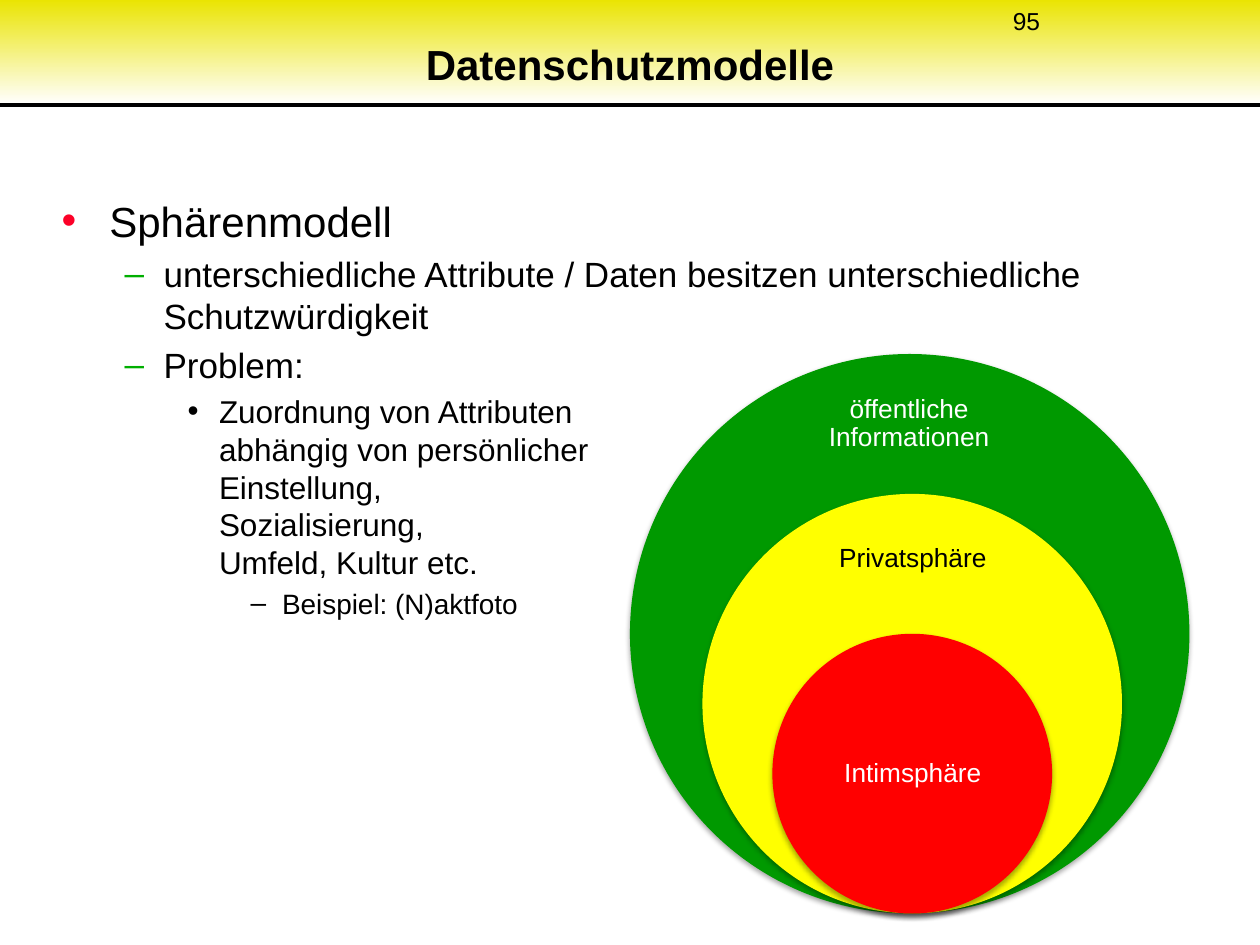
from lxml.etree import SubElement
from pptx import Presentation
from pptx.dml.color import RGBColor
from pptx.enum.shapes import MSO_CONNECTOR, MSO_SHAPE
from pptx.enum.text import MSO_ANCHOR, PP_ALIGN
from pptx.oxml.ns import qn
from pptx.util import Inches, Pt

FONT = "Arial"
COLORS = {
    "black": "000000", "white": "FFFFFF", "header": "EAE402",
    "bullet": "FC0128", "dash": "00AE00",
    "green": "009900", "yellow": "FFFF00", "red": "FF0000",
}
LEVELS = [
    {"left": 0.38, "hang": 0.38, "char": "•", "color": "bullet", "size": 24},
    {"left": 0.81, "hang": 0.31, "char": "–", "color": "dash", "size": 20},
    {"left": 1.25, "hang": 0.25, "char": "•", "color": "black", "size": 18},
    {"left": 1.75, "hang": 0.25, "char": "–", "color": "black", "size": 16},
]
OUTLINE = [
    (0, "Sphärenmodell"),
    (1, "unterschiedliche Attribute / Daten besitzen unterschiedliche Schutzwürdigkeit"),
    (1, "Problem:"),
    (2, "Zuordnung von Attributen \vabhängig von persönlicher\vEinstellung, \v"
        "Sozialisierung, \vUmfeld, Kultur etc."),
    (3, "Beispiel: (N)aktfoto"),
]
SPHERE_BOTTOM = 7.25
SPHERES = [
    ("öffentliche Informationen", 7.22, 4.44, "green", "white", (6.44, 3.03, 1.55, 0.67)),
    ("Privatsphäre", 7.24, 3.33, "yellow", "black", (6.47, 4.13, 1.55, 0.62)),
    ("Intimsphäre", 7.24, 2.22, "red", "white", (6.46, 5.59, 1.57, 1.11)),
]


def rgb(name):
    return RGBColor.from_string(COLORS[name])


def inches(*values):
    return [Inches(v) for v in values]


def apply(obj, values):
    for name, value in values.items():
        setattr(obj, name, value)


def write(p, text, size, color="black", bold=False):
    p.text = text
    for r in p.runs:
        apply(r.font, {"name": FONT, "size": Pt(size), "bold": bold})
        r.font.color.rgb = rgb(color)


def add_text_box(s, box, inset=(0.1, 0.05), anchor=MSO_ANCHOR.TOP):
    tf = s.shapes.add_textbox(*inches(*box)).text_frame
    x, y = inches(*inset)
    apply(tf, {"word_wrap": True, "vertical_anchor": anchor, "margin_left": x,
               "margin_right": x, "margin_top": y, "margin_bottom": y})
    return tf


def add_header(s, title):
    bar = s.shapes.add_shape(MSO_SHAPE.RECTANGLE, *inches(0, 0, 10, 0.83))
    bar.shadow.inherit = False
    bar.line.fill.background()
    bar.fill.gradient()
    bar.fill.gradient_angle = 270
    for stop, position, color in zip(bar.fill.gradient_stops, (0, 1), ("header", "white")):
        stop.position = position
        stop.color.rgb = rgb(color)

    rule = s.shapes.add_connector(MSO_CONNECTOR.STRAIGHT, *inches(0, 0.83, 10, 0.83))
    rule.line.width = Pt(2.25)
    rule.line.color.rgb = rgb("black")
    SubElement(rule._element.spPr, qn("a:effectLst"))

    sp = s.shapes.title
    apply(sp, dict(zip(("left", "top", "width", "height"), inches(0, 0.17, 10, 0.67))))
    sp.text_frame.vertical_anchor = MSO_ANCHOR.MIDDLE
    p = sp.text_frame.paragraphs[0]
    write(p, title, 24, bold=True)
    p.alignment = PP_ALIGN.CENTER
    rule._element.addnext(sp._element)


def set_bullet(p, level):
    pPr = p._p.get_or_add_pPr()
    pPr.set("marL", str(Inches(level["left"])))
    pPr.set("indent", str(-Inches(level["hang"])))
    color = SubElement(pPr, qn("a:buClr"))
    SubElement(color, qn("a:srgbClr"), val=COLORS[level["color"]])
    SubElement(pPr, qn("a:buFont"), typeface=FONT)
    SubElement(pPr, qn("a:buChar"), char=level["char"])


def add_outline(s, items):
    tf = add_text_box(s, (0.39, 1.5, 9.23, 5.42))
    for i, (depth, text) in enumerate(items):
        p = tf.add_paragraph() if i else tf.paragraphs[0]
        level = LEVELS[depth]
        p.level = depth
        set_bullet(p, level)
        if i:
            p.space_before = Pt(level["size"] * 0.2)
        write(p, text, level["size"])


def add_shadow(sp):
    sp.shadow.inherit = False
    effects = sp._element.spPr.find(qn("a:effectLst"))
    shadow = SubElement(effects, qn("a:outerShdw"), blurRad=str(Pt(3.1)),
                        dist=str(Pt(1.8)), dir="5400000", rotWithShape="0")
    color = SubElement(shadow, qn("a:srgbClr"), val=COLORS["black"])
    SubElement(color, qn("a:alpha"), val="35000")


def add_sphere(s, label, center, size, fill, text_color, label_box):
    sp = s.shapes.add_shape(MSO_SHAPE.OVAL, *inches(
        center - size / 2, SPHERE_BOTTOM - size, size, size))
    sp.fill.solid()
    sp.fill.fore_color.rgb = rgb(fill)
    sp.line.fill.background()
    add_shadow(sp)
    p = add_text_box(s, label_box, (0.12, 0.12), MSO_ANCHOR.MIDDLE).paragraphs[0]
    apply(p, {"alignment": PP_ALIGN.CENTER, "line_spacing": 0.9})
    write(p, label, 15, text_color)


def main():
    prs = Presentation()
    apply(prs, {"slide_width": Inches(10), "slide_height": Inches(7.5)})
    s = prs.slides.add_slide(prs.slide_layouts[5])
    add_header(s, "Datenschutzmodelle")
    add_outline(s, OUTLINE)
    write(add_text_box(s, (7.94, 0, 2.06, 0.33)).paragraphs[0], "95", 14)
    for sphere in SPHERES:
        add_sphere(s, *sphere)
    prs.save("out.pptx")


if __name__ == "__main__":
    main()
